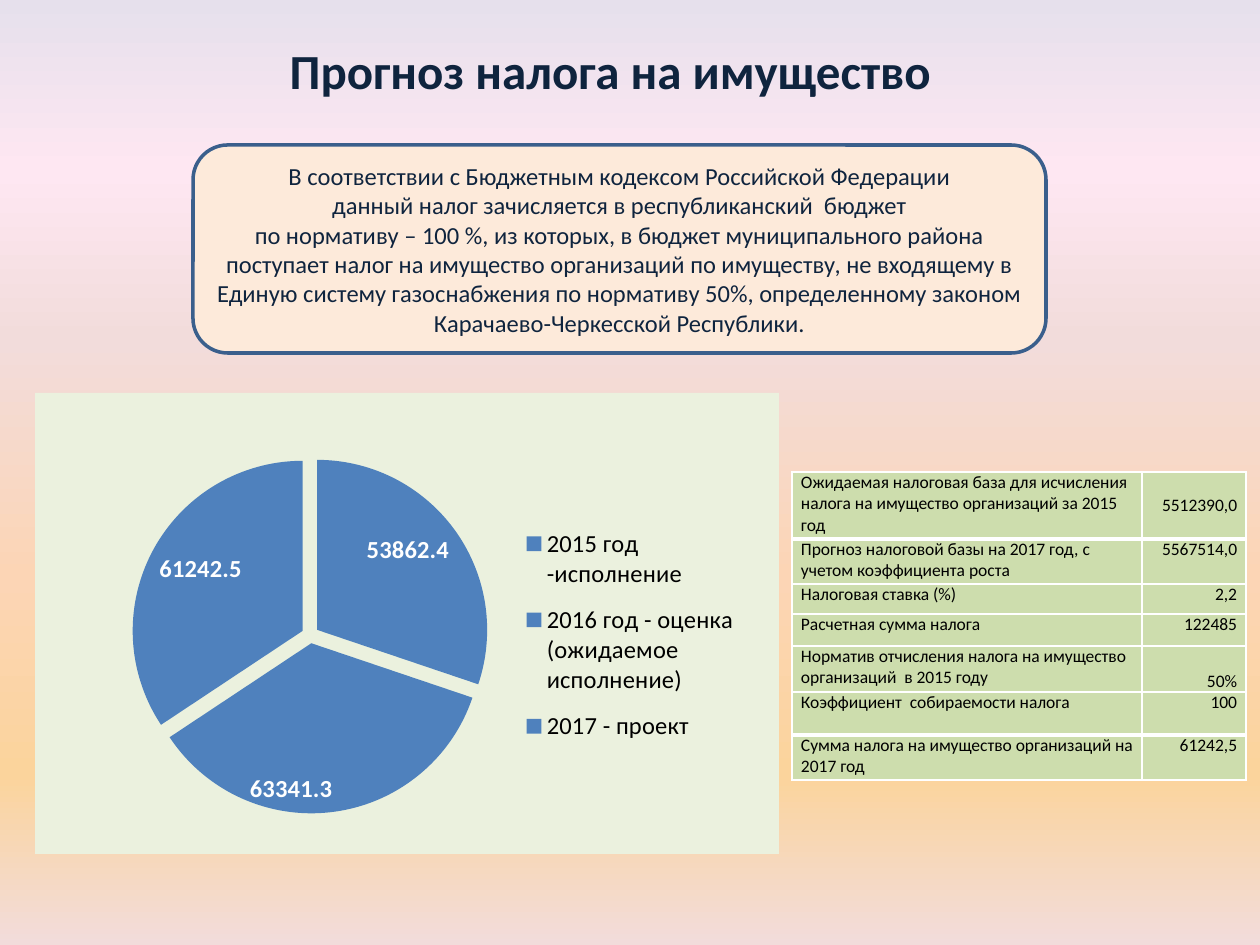
import typing

import pptx
import pptx.chart.data
import pptx.dml.color
import pptx.enum.chart
import pptx.enum.shapes
import pptx.enum.text
import pptx.oxml
import pptx.oxml.ns
import pptx.util

RGB = pptx.dml.color.RGBColor
NAVY = RGB(0x0F, 0x24, 0x3E)
BLUE = RGB(0x3A, 0x5F, 0x8C)
CREAM = RGB(0xFD, 0xEA, 0xDA)
RED = RGB(0xC0, 0x50, 0x4D)
PALE = RGB(0xEB, 0xF1, 0xDE)
GREEN = RGB(0xCD, 0xDD, 0xAD)
WHITE = RGB(0xFF, 0xFF, 0xFF)
BLACK = RGB(0, 0, 0)
STOPS = [
    (0, RGB(0xE6, 0xE0, 0xEC)), (18, RGB(0xFE, 0xE7, 0xF2)),
    (36, RGB(0xF2, 0xDC, 0xDB)), (61, RGB(0xFC, 0xD5, 0xB5)),
    (82, RGB(0xFB, 0xD4, 0x9C)), (100, RGB(0xF2, 0xDC, 0xDB)),
]
FONT = "Calibri"
ALIGN = pptx.enum.text.PP_ALIGN
ANCHOR = pptx.enum.text.MSO_ANCHOR
SCALE = 914400 / 126
NS = pptx.oxml.ns.nsdecls("a", "c")
qn = pptx.oxml.ns.qn


class Box(typing.NamedTuple):
    left: int
    top: int
    width: int
    height: int


class Row(typing.NamedTuple):
    label: str
    value: str
    height: int
    anchor: typing.Any = ANCHOR.TOP


ROWS = [
    Row("Ожидаемая налоговая база для исчисления налога на имущество организаций за 2015 год",
        "5512390,0", 67, ANCHOR.MIDDLE),
    Row("Прогноз налоговой базы на 2017 год, с учетом коэффициента роста", "5567514,0", 45),
    Row("Налоговая ставка (%)", "2,2", 30),
    Row("Расчетная сумма налога", "122485", 32),
    Row("Норматив отчисления налога на имущество организаций  в 2015 году",
        "50%", 46, ANCHOR.BOTTOM),
    Row("Коэффициент  собираемости налога", "100", 43),
    Row("Сумма налога на имущество организаций на 2017 год", "61242,5", 45),
]
RULE = [
    "В соответствии с Бюджетным кодексом Российской Федерации",
    "данный налог зачисляется в республиканский  бюджет",
    "по нормативу – 100 %, из которых, в бюджет муниципального района поступает налог "
    "на имущество организаций по имуществу, не входящему в Единую систему газоснабжения "
    "по нормативу 50%, определенному законом Карачаево-Черкесской Республики.",
]
SHARES = {
    "2015 год -исполнение": 53862.4,
    "2016 год - оценка (ожидаемое исполнение)": 63341.3,
    "2017 - проект": 61242.5,
}


def px(count: int) -> int:
    return round(count * SCALE)


def place(box: Box) -> list[int]:
    return [px(side) for side in box]


def write(frame, lines: list[str], *, size: int, color: RGB, align=ALIGN.LEFT,
          anchor=None, bold: bool = False) -> None:
    frame.word_wrap = True
    if anchor is not None:
        frame.vertical_anchor = anchor
    frame.text = "\n".join(lines)
    for para in frame.paragraphs:
        para.alignment = align
        font = para.runs[0].font
        font.name, font.size, font.bold = FONT, pptx.util.Pt(size), bold
        font.color.rgb = color


def paint(slide) -> None:
    """Give the slide its top-down gradient."""
    fill = slide.background.fill
    fill.gradient()
    fill.gradient_angle = 270
    stops = slide._element.find(".//" + qn("a:gsLst"))
    for old in list(stops):
        stops.remove(old)
    for part, color in STOPS:
        stops.append(pptx.oxml.parse_xml(
            f'<a:gs {NS} pos="{part * 1000}"><a:srgbClr val="{color}"/></a:gs>'))


def head(slide) -> None:
    title = slide.shapes.title
    title.left, title.top, title.width, title.height = place(Box(208, 45, 804, 50))
    write(title.text_frame, ["Прогноз налога на имущество"], size=28, color=NAVY,
          align=ALIGN.CENTER, anchor=ANCHOR.MIDDLE, bold=True)


def panel(slide) -> None:
    kind = pptx.enum.shapes.MSO_SHAPE.ROUNDED_RECTANGLE
    shape = slide.shapes.add_shape(kind, *place(Box(193, 145, 853, 208)))
    shape.shadow.inherit = False
    shape.fill.solid()
    shape.fill.fore_color.rgb = CREAM
    shape.line.color.rgb = BLUE
    shape.line.width = pptx.util.Pt(2)
    write(shape.text_frame, RULE, size=14, color=NAVY,
          align=ALIGN.CENTER, anchor=ANCHOR.MIDDLE)


def layout(x: float, y: float, w: float, h: float, inner: bool = False):
    """Return a manual chart layout, in shares of the chart's size."""
    target = '<c:layoutTarget val="inner"/>' if inner else ""
    sides = "".join(f'<c:{name} val="{val}"/>' for name, val in zip("xywh", (x, y, w, h)))
    return pptx.oxml.parse_xml(
        f'<c:layout {NS}><c:manualLayout>{target}<c:xMode val="edge"/>'
        f'<c:yMode val="edge"/>{sides}</c:manualLayout></c:layout>')


def pie(slide) -> None:
    data = pptx.chart.data.CategoryChartData()
    data.categories = list(SHARES)
    data.add_series("Series 1", list(SHARES.values()))
    enum = pptx.enum.chart
    chart = slide.shapes.add_chart(
        enum.XL_CHART_TYPE.PIE, *place(Box(35, 393, 744, 461)), data).chart
    chart.has_title = False
    chart.font.name, chart.font.size = FONT, pptx.util.Pt(18)
    chart.font.color.rgb = BLACK
    chart.has_legend = True
    chart.legend.position = enum.XL_LEGEND_POSITION.RIGHT
    chart.legend.include_in_layout = False
    chart.legend.font.size = pptx.util.Pt(14)

    plot = chart.plots[0]
    plot.vary_by_categories = False
    series = plot.series[0]
    series.format.fill.solid()
    series.format.fill.fore_color.rgb = RED
    labels = series.data_labels
    labels.show_value = True
    labels.number_format, labels.number_format_is_linked = "0.0", False
    labels.position = enum.XL_LABEL_POSITION.INSIDE_END
    labels.font.name, labels.font.size, labels.font.bold = FONT, pptx.util.Pt(14), True
    labels.font.color.rgb = WHITE

    series._element.find(qn("c:spPr")).addnext(
        pptx.oxml.parse_xml(f'<c:explosion {NS} val="5"/>'))
    root = chart._chartSpace
    area = root.find(".//" + qn("c:plotArea"))
    for old in area.findall(qn("c:layout")):
        area.remove(old)
    area.insert(0, layout(0.13, 0.13, 0.48, 0.79, inner=True))
    key = chart.legend._element
    for old in key.findall(qn("c:layout")):
        key.remove(old)
    key.find(qn("c:legendPos")).addnext(layout(0.64, 0.26, 0.32, 0.53))
    root.find(qn("c:chart")).addnext(pptx.oxml.parse_xml(
        f'<c:spPr {NS}><a:solidFill><a:srgbClr val="{PALE}"/></a:solidFill>'
        '<a:ln><a:noFill/></a:ln></c:spPr>'))


def edge(cell, top: int, bottom: int) -> None:
    """Draw white cell borders; top and bottom widths are in points."""
    props = cell._tc.get_or_add_tcPr()
    for spot, (side, width) in enumerate(zip("LRTB", (1, 1, top, bottom))):
        props.insert(spot, pptx.oxml.parse_xml(
            f'<a:ln{side} {NS} w="{width * 12700}"><a:solidFill>'
            f'<a:srgbClr val="{WHITE}"/></a:solidFill></a:ln{side}>'))


def grid(slide) -> None:
    high = sum(row.height for row in ROWS)
    table = slide.shapes.add_table(
        len(ROWS), 2, *place(Box(792, 472, 454, high))).table
    table.first_row = table.horz_banding = False
    for col, width in zip(table.columns, (350, 104)):
        col.width = px(width)
    last = len(ROWS) - 1
    thick = {0, last - 1}
    for spot, row in enumerate(ROWS):
        table.rows[spot].height = px(row.height)
        top, bottom = (3 if line in thick else 1 for line in (spot - 1, spot))
        for col, text in enumerate((row.label, row.value)):
            cell = table.cell(spot, col)
            cell.margin_left = cell.margin_right = px(9)
            cell.margin_top = cell.margin_bottom = 0
            cell.vertical_anchor = row.anchor if col else ANCHOR.TOP
            cell.fill.solid()
            cell.fill.fore_color.rgb = GREEN
            write(cell.text_frame, [text], size=10, color=BLACK,
                  align=ALIGN.RIGHT if col else ALIGN.LEFT)
            edge(cell, top, bottom)


def main() -> None:
    deck = pptx.Presentation()
    deck.slide_width, deck.slide_height = px(1260), px(945)
    slide = deck.slides.add_slide(deck.slide_layouts[5])
    paint(slide)
    head(slide)
    panel(slide)
    pie(slide)
    grid(slide)
    deck.save("out.pptx")


if __name__ == "__main__":
    main()
